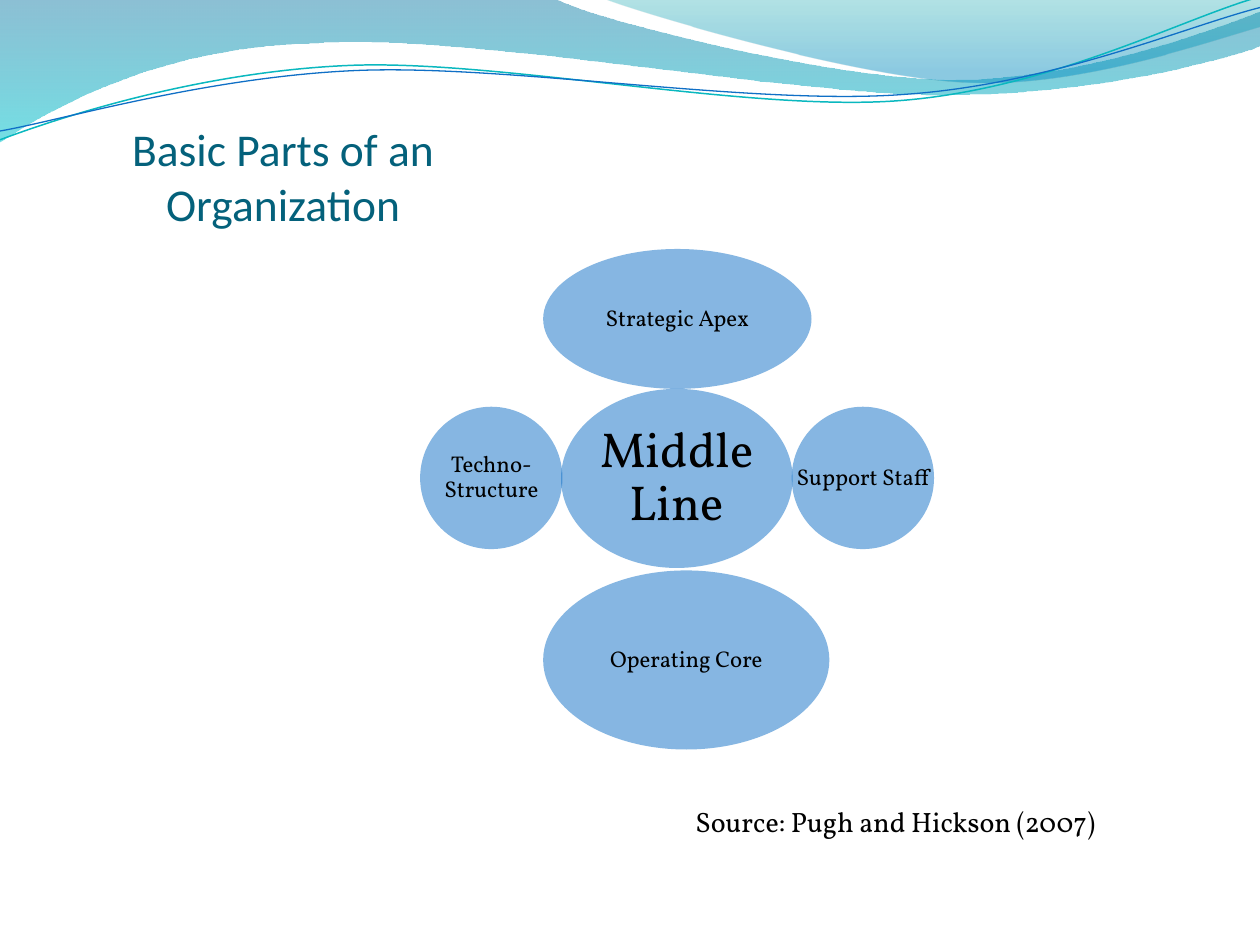
from lxml.etree import SubElement
from pptx import Presentation
from pptx.dml.color import RGBColor
from pptx.enum.shapes import MSO_SHAPE
from pptx.enum.text import MSO_ANCHOR, PP_ALIGN
from pptx.oxml import parse_xml
from pptx.oxml.ns import nsdecls, qn
from pptx.util import Cm, Pt

COLORS = {"title": "04617B", "text": "000000", "part": "0F6FC6",
          "teal_line": "0AB8BF", "blue_line": "0F6FC6"}

# Waves on a grid ten units wide: a start point, then lines (one point)
# and Bezier curves (two control points and an end point).
FILLED_WAVES = [
    ((0, 0), [
        [(4.4, -0.01)],
        [(4.76, 0.17), (6.64, 0.63), (7.58, 0.63)],
        [(8.53, 0.63), (9.58, 0.26), (10, 0.09)],
        [(10.01, 0.36)],
        [(9.83, 0.44), (8.7, 0.76), (7.46, 0.75)],
        [(6.22, 0.75), (3.82, 0.28), (2.57, 0.34)],
        [(1.29, 0.36), (0.46, 0.83), (-0.01, 1.13)],
        [(0, 0)]],
     [(0, "0074A1", 45), (100, "00C6CF", 55)]),
    ((4.79, -0.01), [
        [(5.09, 0.11), (6.82, 0.62), (7.69, 0.65)],
        [(8.56, 0.69), (9.61, 0.32), (10, 0.21)],
        [(10, 0)],
        [(4.79, -0.01)]],
     [(0, "00A1A9", 30), (80, "008BBF", 45)]),
]
LINE_WAVES = [
    ((0, 1.11), [
        [(0.48, 0.93), (1.58, 0.57), (2.77, 0.52)],
        [(3.95, 0.47), (5.93, 0.89), (7.13, 0.8)],
        [(8.33, 0.71), (9.38, 0.15), (9.98, -0.02)]], "teal_line", 0.85),
    ((0, 1.04), [
        [(0.47, 0.96), (1.64, 0.61), (2.83, 0.56)],
        [(4.03, 0.51), (5.97, 0.84), (7.17, 0.75)],
        [(8.36, 0.67), (9.41, 0.21), (10, 0.06)]], "blue_line", 0.75),
]

# Text, left, top, width, height (cm, within the diagram), size, wrap
PARTS = [
    ("Middle Line", 2.84, 2.82, 4.67, 3.61, 28, True),
    ("Strategic Apex", 2.48, 0, 5.41, 2.82, 13, True),
    ("Support Staff", 7.49, 3.18, 2.87, 2.87, 13, False),
    ("Operating Core", 2.48, 6.48, 5.77, 3.61, 13, True),
    ("Techno-Structure", 0, 3.18, 2.87, 2.87, 13, True),
]


def rgb(name):
    return RGBColor.from_string(COLORS[name])


def set_text(tf, text, font, size, color, align=PP_ALIGN.CENTER):
    tf.text = text
    p = tf.paragraphs[0]
    p.alignment = align
    r = p.runs[0]
    r.font.name, r.font.size = font, Pt(size)
    r.font.color.rgb = rgb(color)
    return p


def set_margins(tf, left, top, right, bottom):
    tf.margin_left, tf.margin_top = Cm(left), Cm(top)
    tf.margin_right, tf.margin_bottom = Cm(right), Cm(bottom)


def bend_segments(sp, segments):
    """Join the three lines drawn for each curve into one Bezier segment."""
    lines = iter(list(sp.element.iter(qn("a:lnTo"))))
    for segment in segments:
        first, *rest = [next(lines) for _ in segment]
        if rest:
            curve = parse_xml(f'<a:cubicBezTo {nsdecls("a")}/>')
            first.addprevious(curve)
            for line in (first, *rest):
                curve.append(line[0])
                line.getparent().remove(line)


def add_wave(slide, left, top, width, start, segments, close):
    units = 1000
    points = [(x * units, y * units) for segment in segments for x, y in segment]
    builder = slide.shapes.build_freeform(start[0] * units, start[1] * units,
                                          scale=width / (10 * units))
    builder.add_line_segments(points, close=close)
    sp = builder.convert_to_shape(left, top)
    bend_segments(sp, segments)
    sp.shadow.inherit = False
    return sp


def fill_gradient(sp, stops):
    """Fill from top to bottom with (position, colour, opacity) stops."""
    xml = "".join(
        f'<a:gs pos="{pos * 1000}"><a:srgbClr val="{color}">'
        f'<a:alpha val="{alpha * 1000}"/></a:srgbClr></a:gs>'
        for pos, color, alpha in stops)
    geometry = sp.element.spPr.find(qn("a:custGeom"))
    geometry.addnext(parse_xml(
        f'<a:gradFill {nsdecls("a")} rotWithShape="1"><a:gsLst>{xml}</a:gsLst>'
        '<a:lin ang="5400000" scaled="0"/></a:gradFill>'))


def add_wave_band(slide, left, top, width):
    for start, segments, stops in FILLED_WAVES:
        sp = add_wave(slide, left, top, width, start, segments, True)
        fill_gradient(sp, stops)
        sp.line.fill.background()
    for start, segments, color, weight in LINE_WAVES:
        sp = add_wave(slide, left, top, width, start, segments, False)
        sp.fill.background()
        sp.line.color.rgb = rgb(color)
        sp.line.width = Pt(weight)


def place_title(slide, left, top, width, height):
    title = slide.shapes.title
    title.left, title.top, title.width, title.height = left, top, width, height
    tf = title.text_frame
    tf.word_wrap = True
    tf.vertical_anchor = MSO_ANCHOR.BOTTOM
    set_margins(tf, 0, 0.13, 0, 0)
    set_text(tf, "Basic Parts of an Organization", "Calibri", 26, "title")


def add_diagram(slide, left, top):
    for text, x, y, width, height, size, wrap in PARTS:
        sp = slide.shapes.add_shape(MSO_SHAPE.OVAL, left + Cm(x), top + Cm(y),
                                    Cm(width), Cm(height))
        sp.shadow.inherit = False
        sp.line.fill.background()
        sp.fill.solid()
        sp.fill.fore_color.rgb = rgb("part")
        color = sp.element.spPr.find(qn("a:solidFill"))[0]
        SubElement(color, qn("a:alpha"), val="50000")
        tf = sp.text_frame
        tf.word_wrap = wrap
        tf.vertical_anchor = MSO_ANCHOR.MIDDLE
        set_margins(tf, 0, 0, 0, 0)
        set_text(tf, text, "Vollkorn", size, "text").line_spacing = 0.9


def add_source(slide, left, top, width, height):
    tf = slide.shapes.add_textbox(left, top, width, height).text_frame
    tf.word_wrap = True
    set_margins(tf, 0.05, 0.13, 0.05, 0.13)
    p = set_text(tf, "Source: Pugh and Hickson (2007)", "Vollkorn", 16, "text",
                 PP_ALIGN.LEFT)
    p.space_before = Pt(3.2)


def main():
    prs = Presentation()
    prs.slide_width, prs.slide_height = Cm(25.4), Cm(19.05)
    slide = prs.slides.add_slide(prs.slide_layouts[5])
    add_wave_band(slide, Cm(0), Cm(0), prs.slide_width)
    place_title(slide, Cm(1.9), Cm(1.42), Cm(7.62), Cm(3.23))
    add_diagram(slide, Cm(8.47), Cm(5.02))
    add_source(slide, Cm(13.97), Cm(16.08), Cm(9.09), Cm(1.47))
    prs.save("out.pptx")


if __name__ == "__main__":
    main()
